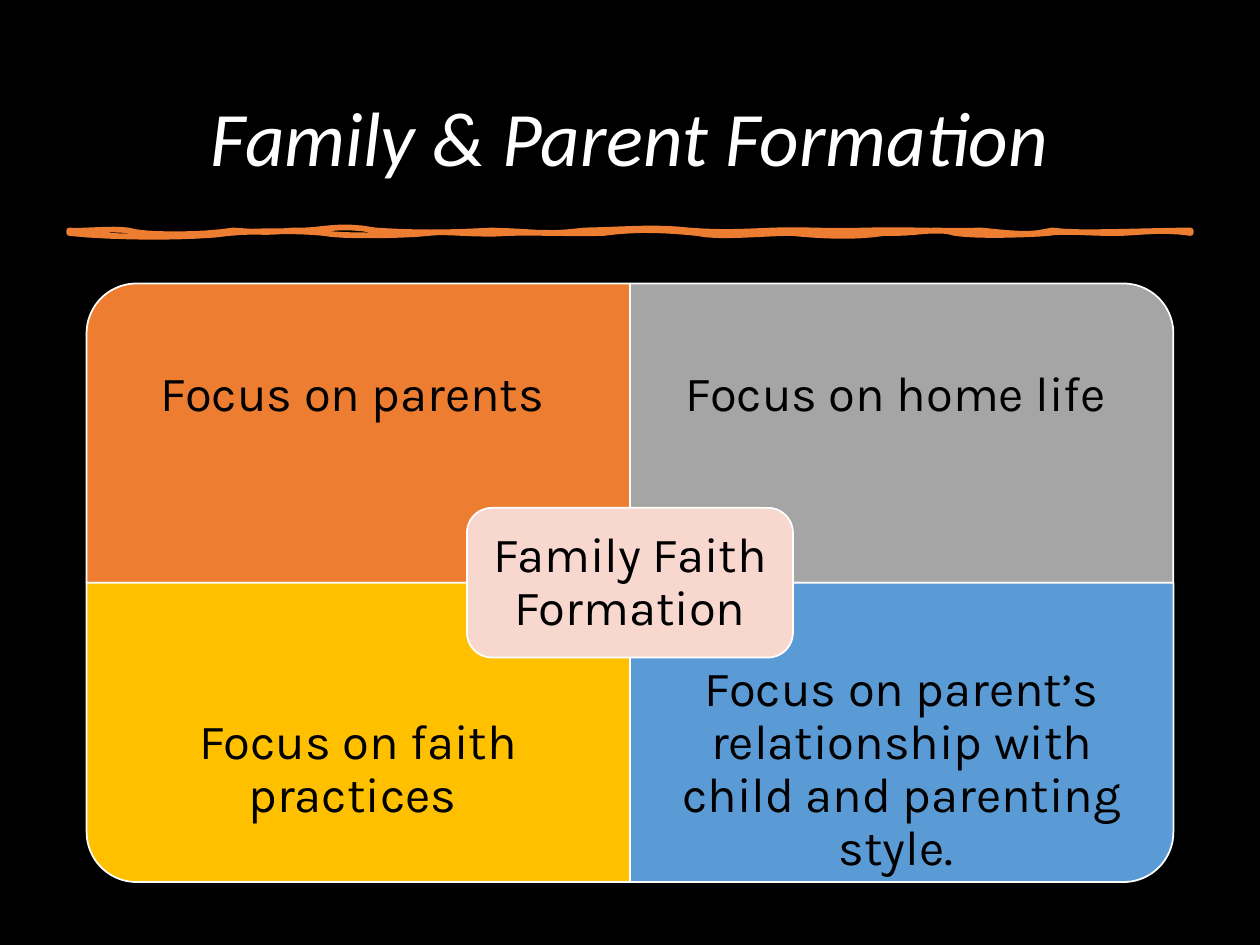
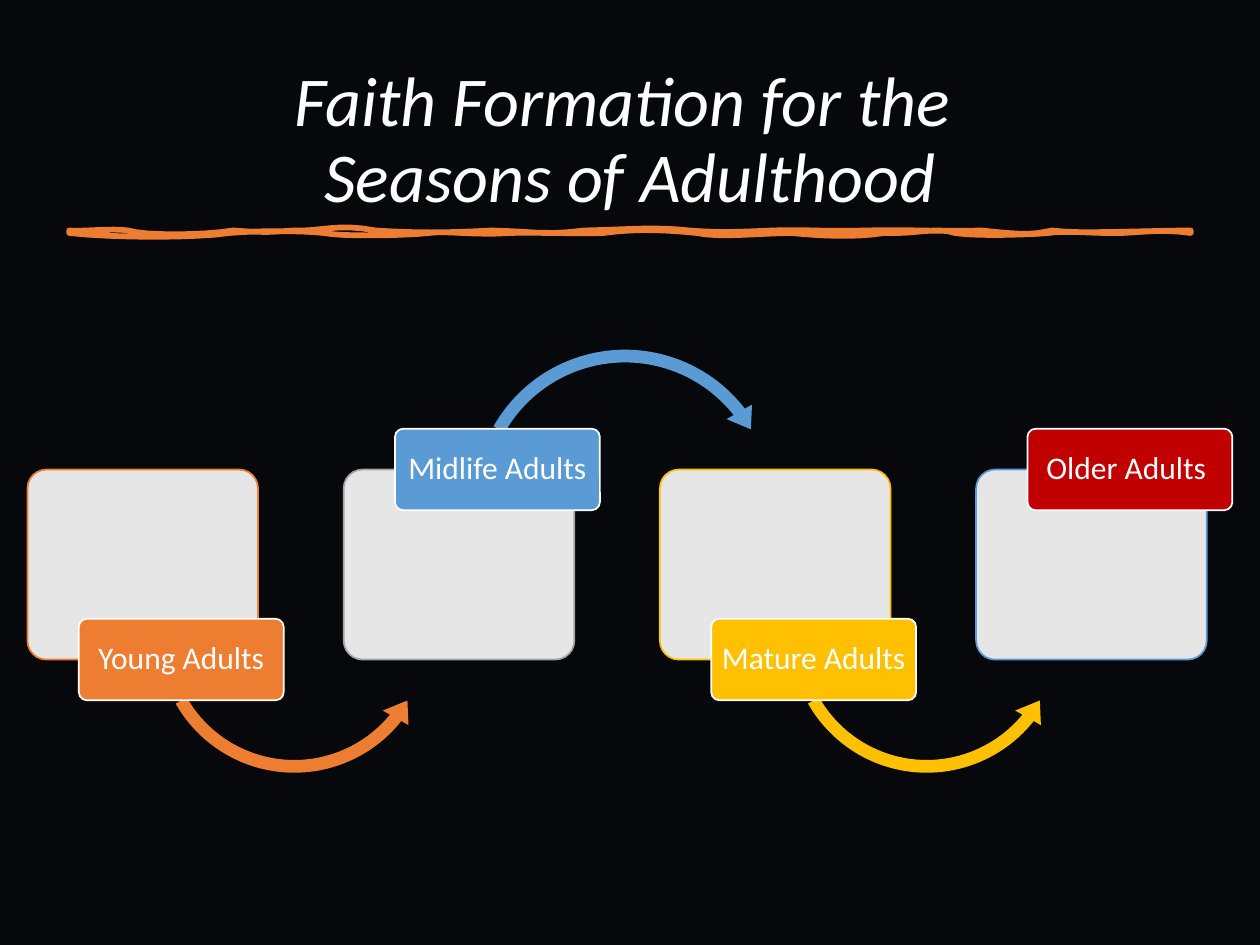
"""Build two slides on family and adult faith formation."""
from lxml import etree
from pptx import Presentation
from pptx.dml.color import RGBColor
from pptx.enum.shapes import MSO_SHAPE
from pptx.enum.text import MSO_ANCHOR, MSO_AUTO_SIZE, PP_ALIGN
from pptx.oxml.ns import qn
from pptx.util import Pt

BLACK = RGBColor(0x00, 0x00, 0x00)
NIGHT = RGBColor(0x07, 0x08, 0x0B)
WHITE = RGBColor(0xFF, 0xFF, 0xFF)
ORANGE = RGBColor(0xED, 0x7D, 0x31)
GRAY = RGBColor(0xA5, 0xA5, 0xA5)
GOLD = RGBColor(0xFF, 0xC0, 0x00)
BLUE = RGBColor(0x5B, 0x9B, 0xD5)
RED = RGBColor(0xC0, 0x00, 0x00)
PINK = RGBColor(0xF8, 0xD7, 0xCE)

UNIT = 0.72
STEPS = 8
START = (55, 183)
WAVE = [
    (64, 184, 89, 181, 102, 183), (114, 187, 160, 187, 185, 183),
    (213, 185, 216, 184, 233, 183), (254, 184, 268, 177, 298, 183),
    (331, 185, 352, 185, 390, 183), (431, 184, 428, 187, 464, 183),
    (503, 182, 520, 180, 547, 183), (573, 185, 588, 184, 613, 183),
    (641, 182, 651, 184, 687, 183), (721, 182, 741, 184, 779, 183),
    (817, 187, 819, 186, 835, 183), (855, 186, 913, 183, 945, 183),
    (945, 184, 945, 185, 945, 185), (920, 181, 895, 186, 880, 185),
    (863, 185, 845, 183, 832, 185), (822, 186, 777, 188, 758, 185),
    (743, 180, 727, 186, 702, 185), (676, 189, 650, 187, 628, 185),
    (607, 185, 570, 189, 553, 185), (532, 183, 508, 181, 479, 185),
    (450, 186, 435, 184, 405, 185), (374, 187, 356, 183, 340, 185),
    (323, 187, 271, 188, 257, 185), (238, 183, 206, 183, 182, 185),
    (156, 189, 91, 189, 55, 185),
]

dots = []
last = START
for x1, y1, x2, y2, x3, y3 in WAVE:
    for step in range(1, STEPS + 1):
        t = step / STEPS
        u = 1 - t
        mix = (u ** 3, 3 * u * u * t, 3 * u * t * t, t ** 3)
        dots.append(tuple(
            Pt(UNIT * sum(m * v for m, v in zip(mix, run)))
            for run in ((last[0], x1, x2, x3), (last[1], y1, y2, y3))))
    last = (x3, y3)


def write(shape, text, size, font, color, pad=(7.2, 3.6)):
    frame = shape.text_frame
    frame.word_wrap = True
    frame.auto_size = MSO_AUTO_SIZE.NONE
    frame.vertical_anchor = MSO_ANCHOR.MIDDLE
    frame.margin_left = frame.margin_right = Pt(pad[0])
    frame.margin_top = frame.margin_bottom = Pt(pad[1])
    para = frame.paragraphs[0]
    para.alignment = PP_ALIGN.CENTER
    para.line_spacing = 0.9
    for i, part in enumerate(text.split("\n")):
        if i:
            para.add_line_break()
        run = para.add_run()
        run.text = part
        run.font.size = Pt(size)
        run.font.name = font
        run.font.color.rgb = color
        run.font.italic = shape.is_placeholder


def draw(slide, kind, box, fill, edge=None, adjust=()):
    shape = slide.shapes.add_shape(kind, *map(Pt, box))
    shape.shadow.inherit = False
    shape.fill.solid()
    shape.fill.fore_color.rgb = fill
    if edge is None:
        shape.line.fill.background()
    else:
        shape.line.color.rgb = edge
        shape.line.width = Pt(1)
    for i, value in enumerate(adjust):
        shape.adjustments[i] = value
    return shape


deck = Presentation()
deck.slide_width, deck.slide_height = Pt(720), Pt(540)

slides = []
for text, size, back in (
    ("Family & Parent Formation", 44, BLACK),
    ("Faith Formation for the \nSeasons of Adulthood", 40, NIGHT),
):
    slide = deck.slides.add_slide(deck.slide_layouts[5])
    slide.background.fill.solid()
    slide.background.fill.fore_color.rgb = back
    title = slide.shapes.title
    title.left, title.top = Pt(49.5), Pt(28.75)
    title.width, title.height = Pt(621), Pt(104.4)
    write(title, text, size, "Calibri", WHITE)

    pen = slide.shapes.build_freeform(*(Pt(UNIT * v) for v in START))
    pen.add_line_segments(dots, close=True)
    rule = pen.convert_to_shape()
    rule.shadow.inherit = False
    rule.fill.solid()
    rule.fill.fore_color.rgb = ORANGE
    rule.line.color.rgb = ORANGE
    rule.line.width = Pt(3.25)
    for line in rule.element.iter(qn("a:path")):
        line.set("fill", "none")
    slides.append(slide)

family, seasons = slides

MID_X, MID_Y = 360, 333
WIDE, HIGH = 310.5, 171
TALL = 128.25
for i, (text, fill, turn) in enumerate((
    ("Focus on parents ", ORANGE, 270),
    ("Focus on home life ", GRAY, 0),
    ("Focus on faith practices ", GOLD, 180),
    ("Focus on parent’s relationship with child and parenting style. ",
     BLUE, 90),
)):
    row, col = divmod(i, 2)
    left = MID_X + (col - 1) * WIDE
    top = MID_Y + (row - 1) * HIGH
    w, h = (HIGH, WIDE) if turn % 180 else (WIDE, HIGH)
    box = (left + (WIDE - w) / 2, top + (HIGH - h) / 2, w, h)
    draw(family, MSO_SHAPE.ROUND_1_RECTANGLE, box, fill, WHITE).rotation = turn
    area = (left, top + row * (HIGH - TALL), WIDE, TALL)
    label = family.shapes.add_textbox(*map(Pt, area))
    write(label, text, 28, "Karla", BLACK, (15.7, 15.7))

w, h = 186.3, 85.5
hub = draw(family, MSO_SHAPE.ROUNDED_RECTANGLE,
           (MID_X - w / 2, MID_Y - h / 2, w, h), PINK, WHITE)
write(hub, "Family Faith Formation", 28, "Karla", BLACK, (8.4, 8.4))

CARD_W, CARD_H, CARD_Y = 131.8, 108.6, 268.3
TAG_W, TAG_H = 117.1, 46.6
LOW = (MSO_SHAPE.LEFT_CIRCULAR_ARROW, 165.6, 280.8,
       (0.044, 5.554, 23.309, 90.245, 0.051))
TOP = (MSO_SHAPE.CIRCULAR_ARROW, 182.2, 195.1,
       (0.04, 4.992, 193.253, 125.755, 0.046))
for i, (text, edge, fill, arrow) in enumerate((
    ("Young Adults", ORANGE, ORANGE, LOW),
    ("Midlife Adults", GRAY, BLUE, TOP),
    ("Mature Adults", GOLD, GOLD, LOW),
    ("Older Adults ", BLUE, RED, None),
)):
    left = 15.7 + 180.7 * i
    card = draw(seasons, MSO_SHAPE.ROUNDED_RECTANGLE,
                (left, CARD_Y, CARD_W, CARD_H), WHITE, edge, (0.1,))
    tint = next(card.element.spPr.iter(qn("a:srgbClr")))
    etree.SubElement(tint, qn("a:alpha")).set("val", "90000")
    if arrow:
        kind, size, top, adjust = arrow
        draw(seasons, kind, (left + 69.7, top, size, size), fill, None, adjust)
    rim = CARD_Y if i % 2 else CARD_Y + CARD_H
    tag = draw(seasons, MSO_SHAPE.ROUNDED_RECTANGLE,
               (left + 29.3, rim - TAG_H / 2, TAG_W, TAG_H),
               fill, WHITE, (0.1,))
    write(tag, text, 18, "Calibri", WHITE, (2.7, 1.8))

deck.save("out.pptx")
